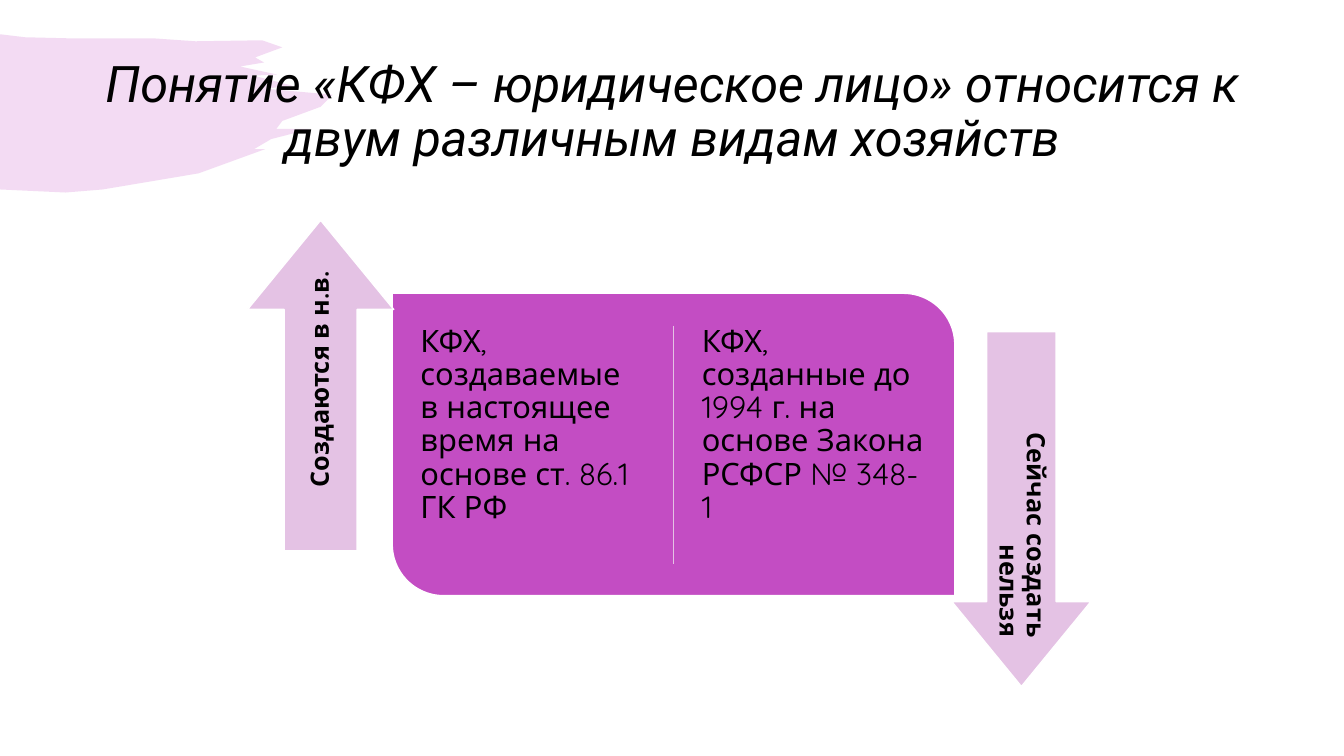
import pptx
import pptx.util
import pptx.dml.color
import pptx.enum.shapes
import pptx.enum.text
import lxml.etree
from pptx.oxml.ns import qn

Inches = pptx.util.Inches
Pt = pptx.util.Pt
RGB = pptx.dml.color.RGBColor
SHAPE = pptx.enum.shapes.MSO_SHAPE
ANCHOR = pptx.enum.text.MSO_ANCHOR
ALIGN = pptx.enum.text.PP_ALIGN

PURPLE = RGB(0xC3, 0x4D, 0xC3)
LILAC = RGB(0xE4, 0xC2, 0xE4)
WHITE = RGB(0xFF, 0xFF, 0xFF)
BLACK = RGB(0, 0, 0)

# Corners of the brush stroke, relative to its top left.
BRUSH_OUTLINE = [
    (0, 0), (0.25, 0.03), (0.66, 0.04), (1.51, 0.04), (1.94, 0.07),
    (2.6, 0.06), (2.8, 0.13), (2.53, 0.23), (2.62, 0.28), (2.38, 0.32),
    (2.75, 0.4), (2.51, 0.41), (2.9, 0.51), (2.63, 0.54), (3.3, 0.6),
    (3.18, 0.72), (2.8, 0.86), (2.74, 0.94), (3.08, 0.94), (2.69, 1.04),
    (2.52, 1.14), (2.63, 1.14), (1.97, 1.38), (1.02, 1.54), (0.65, 1.57),
    (0, 1.54),
]


def add_brush(s, left, top):
    points = [(Inches(left + x), Inches(top + y)) for x, y in BRUSH_OUTLINE]
    builder = s.shapes.build_freeform(*points[0])
    builder.add_line_segments(points[1:], close=True)
    brush = builder.convert_to_shape()
    brush.shadow.inherit = False
    brush.fill.solid()
    brush.fill.fore_color.rgb = PURPLE
    color = brush._element.spPr.find(qn("a:solidFill")).find(qn("a:srgbClr"))
    lxml.etree.SubElement(color, qn("a:alpha"), val="20000")
    brush.line.fill.background()


def add_text(s, box, text, size, font="Quicksand", align=ALIGN.LEFT,
             anchor=ANCHOR.TOP, inset=0.09, after=0.35, rotation=0,
             bold=False, italic=False):
    tb = s.shapes.add_textbox(*map(Inches, box))
    tb.rotation = rotation
    tf = tb.text_frame
    tf.word_wrap = True
    tf.vertical_anchor = anchor
    tf.margin_left = tf.margin_right = Inches(inset)
    tf.margin_top = tf.margin_bottom = Inches(inset)
    p = tf.paragraphs[0]
    p.alignment = align
    p.line_spacing = 0.9
    p.space_after = Pt(size * after)
    r = p.add_run()
    r.text = text
    r.font.name = font
    r.font.size = Pt(size)
    r.font.bold = bold
    r.font.italic = italic
    r.font.color.rgb = BLACK


def add_filled(s, kind, box, color, adjustments):
    shape = s.shapes.add_shape(kind, *map(Inches, box))
    shape.shadow.inherit = False
    shape.fill.solid()
    shape.fill.fore_color.rgb = color
    shape.line.color.rgb = WHITE
    shape.line.width = Pt(1)
    for i, value in enumerate(adjustments):
        shape.adjustments[i] = value
    return shape


def add_comparison(s, left, top, width, height, texts):
    """Place the rounded panel with two texts and a divider between them."""
    add_filled(s, SHAPE.ROUND_2_DIAG_RECTANGLE, (left, top, width, height),
               PURPLE, (0, 0.17))
    middle = left + width / 2
    divider = s.shapes.add_connector(
        pptx.enum.shapes.MSO_CONNECTOR.STRAIGHT, Inches(middle), Inches(top + 0.32),
        Inches(middle), Inches(top + height - 0.31))
    divider.line.color.rgb = LILAC
    divider.line.width = Pt(1)
    lxml.etree.SubElement(divider._element.spPr, qn("a:effectLst"))
    for i, text in enumerate(texts):
        add_text(s, (left + 0.19 + i * width / 2, top + 0.23, 2.42, 2.55), text, 22)


def add_arrow(s, box, label_box, rotation, text):
    """Place a turned arrow and its label; boxes are given before rotation."""
    arrow = add_filled(s, SHAPE.RIGHT_ARROW, box, LILAC, (0.5, 0.61))
    arrow.rotation = rotation
    add_text(s, label_box, text, 18, align=ALIGN.RIGHT, anchor=ANCHOR.MIDDLE,
             inset=0.07, rotation=rotation, bold=True)


def main():
    prs = pptx.Presentation()
    prs.slide_width, prs.slide_height = Inches(13.33), Inches(7.5)
    s = prs.slides.add_slide(prs.slide_layouts[6])
    add_brush(s, 0, 0.34)
    add_text(s, (0.92, 0.4, 11.5, 1.45),
             "Понятие «КФХ – юридическое лицо» относится к двум различным видам хозяйств",
             36, font="Roboto", align=ALIGN.CENTER, anchor=ANCHOR.MIDDLE,
             after=0, italic=True)
    add_comparison(s, 3.89, 2.91, 5.58, 3, (
        "КФХ, создаваемые в настоящее время на основе ст. 86.1 ГК РФ",
        "КФХ, созданные до 1994 г. на основе Закона РСФСР № 348-1"))
    add_arrow(s, (1.54, 3.1, 3.28, 1.45), (1.76, 3.68, 2.84, 0.72), 270,
              "Создаются в н.в.")
    add_arrow(s, (8.37, 4.36, 3.52, 1.38), (8.58, 4.5, 3.1, 0.69), 90,
              "Сейчас создать нельзя")
    prs.save("out.pptx")


if __name__ == "__main__":
    main()
